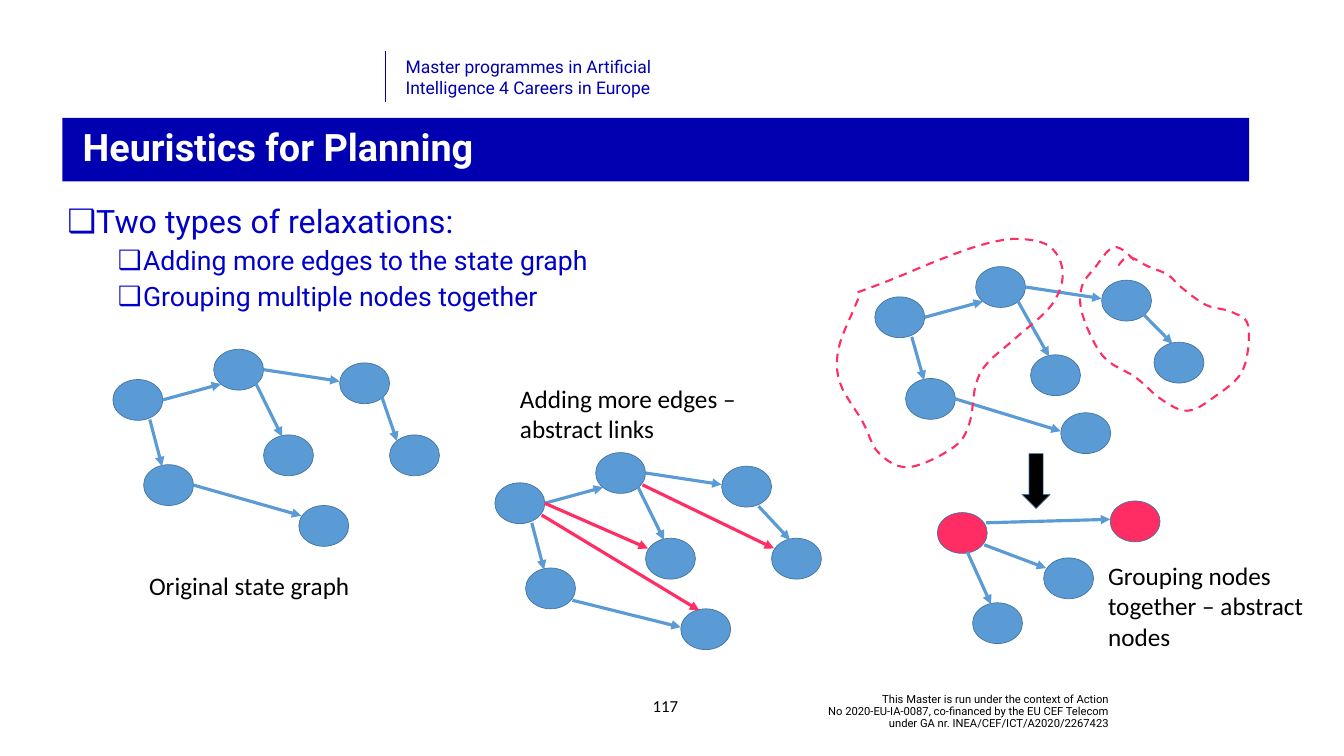
"""Build the slide on relaxation heuristics for planning, with its state graphs."""
from lxml import etree
from pptx import Presentation, util as u
from pptx.dml.color import RGBColor
from pptx.enum import dml, shapes, text
from pptx.oxml.ns import qn

WIDTH, HEIGHT = 26.67, 15
CELL = u.Inches(1)
NODE = (0.99, 0.81)
CURVE_STEPS = 6
COLORS = {"navy": "0000B0", "blue": "0100C8", "node": "5B9BD5", "edge": "43739E",
          "pink": "FF2D64", "black": "000000", "white": "FFFFFF"}
LEFT, CENTER, RIGHT = text.PP_ALIGN.LEFT, text.PP_ALIGN.CENTER, text.PP_ALIGN.RIGHT
TOP, MIDDLE = text.MSO_ANCHOR.TOP, text.MSO_ANCHOR.MIDDLE

TITLE = "Heuristics for Planning"
PROGRAMME = ["Master programmes in Artificial", "Intelligence 4 Careers in Europe"]
FUNDING = ["This Master is run under the context of Action",
           "No 2020-EU-IA-0087, co-financed by the EU CEF Telecom",
           "under GA nr. INEA/CEF/ICT/A2020/2267423"]
BULLETS = [(0, "Two types of relaxations:"),
           (1, "Adding more edges to the state graph"),
           (1, "Grouping multiple nodes together")]
LEVELS = [{"size": 46, "margin": 0.5, "before": 0}, {"size": 38, "margin": 1.5, "before": 10}]
LABELS = [("Original state graph", (2.86, 11.26, 4.29, 0.71)),
          ("Grouping nodes together – abstract nodes", (21.89, 11.07, 4.1, 1.92)),
          ("Adding more edges – abstract links", (10.22, 7.56, 4.88, 1.31))]

PORTS = {"E": (1, 0.5), "ENE": (0.98, 0.25), "ESE": (0.94, 0.79), "SE": (0.85, 0.85),
         "SSE": (0.74, 0.98), "S": (0.6, 0.96), "SW": (0.15, 0.85), "W": (0, 0.45),
         "WNW": (0.05, 0.25), "NW": (0.15, 0.15), "NNW": (0.37, 0.04)}

STATES = {"start": (0, 0), "top": (2, -0.6), "right": (4.5, -0.33), "middle": (2.99, 1.1),
          "low": (0.61, 1.69), "far": (3.69, 2.5), "leaf": (5.49, 1.1)}
TIGHT_STATES = {**STATES, "middle": (3.09, 1.15), "low": (0.61, 1.62),
                "far": (3.69, 2.3), "leaf": (5.54, 0.9)}
GROUPED_STATES = {"left group": (0, 0), "right group": (3.43, -0.23),
                  "middle": (2.11, 0.9), "far": (0.7, 1.79)}
MOVES = ["start E top SW", "start SSE low NNW", "top E right W", "top SE middle NNW"]

ORIGINAL = {"origin": (2.24, 7.53), "states": STATES,
            "edges": MOVES + ["low E far WNW", "right SE leaf NW"]}
LINKED = {"origin": (9.82, 9.58), "states": STATES,
          "edges": MOVES + ["low ESE far W", "right SSE leaf NNW"],
          "links": ["start ESE far NNW", "start E middle WNW", "top ESE leaf WNW"]}
CLUSTERED = {"origin": (17.36, 5.89), "states": TIGHT_STATES,
             "edges": MOVES + ["low E far W", "right SE leaf NNW"]}
GROUPED = {"origin": (18.6, 10.17), "states": GROUPED_STATES,
           "edges": ["left group ENE right group W", "left group S far NNW",
                     "left group ESE middle WNW"],
           "merged": ["left group", "right group"]}

LEFT_CLUSTER = [(17.02, 5.8), (17.71, 5.54), (18.68, 5.14), (19.51, 4.85), (20.2, 4.74),
                (20.83, 4.89), (21.09, 5.41), (20.87, 6.05), (20.14, 6.72), (19.58, 7.22),
                (19.36, 7.65), (19.24, 8.39), (18.93, 8.87), (18.04, 9.27), (17.44, 8.99),
                (17.12, 8.37), (16.67, 7.6), (16.64, 6.92), (16.95, 6.12), (17.06, 5.87)]
RIGHT_CLUSTER = [(22.51, 5.16), (22.23, 4.93), (22.02, 4.95), (21.73, 5.31), (21.47, 5.68),
                 (21.48, 6.24), (21.89, 7.07), (22.54, 7.49), (23.04, 7.92), (23.56, 8.15),
                 (24.09, 7.88), (24.66, 7.35), (24.77, 6.47), (24.44, 6.19), (23.93, 6.05),
                 (23.44, 5.7), (23.17, 5.45), (22.77, 5.28), (22.39, 5.1), (22.16, 5.31)]


def color(name):
    return RGBColor.from_string(COLORS[name])


def cells(values):
    return [round(value * CELL) for value in values]


def smooth(points):
    """Return points along a Catmull-Rom curve through the given ones."""
    padded = [points[0], *points, points[-1]]
    curve = []
    for knots in zip(padded, padded[1:], padded[2:], padded[3:]):
        for step in range(CURVE_STEPS):
            t = step / CURVE_STEPS
            curve.append([b + t * (c - a) / 2 + t ** 2 * (a - 2.5 * b + 2 * c - d / 2)
                          + t ** 3 * (3 * b - a - 3 * c + d) / 2
                          for a, b, c, d in zip(*knots)])
    return curve + [points[-1]]


def add_solid(page, kind, area, fill, line=None):
    solid = page.shapes.add_shape(kind, *cells(area))
    solid.shadow.inherit = False
    solid.fill.solid()
    solid.fill.fore_color.rgb = color(fill)
    if line:
        solid.line.color.rgb = color(line)
        solid.line.width = u.Pt(1)
    else:
        solid.line.fill.background()
    return solid


def add_line(page, start, end, name, width, arrow=True):
    line = page.shapes.add_connector(shapes.MSO_CONNECTOR.STRAIGHT, *cells((*start, *end)))
    line.line.color.rgb = color(name)
    line.line.width = u.Pt(width)
    if arrow:
        etree.SubElement(line.line._get_or_add_ln(), qn("a:tailEnd"), type="triangle")
    etree.SubElement(line._element.spPr, qn("a:effectLst"))


def add_cluster(page, points):
    first, *others = [cells(point) for point in smooth(points)]
    builder = page.shapes.build_freeform(*first)
    builder.add_line_segments(others, close=False)
    outline = builder.convert_to_shape()
    outline.shadow.inherit = False
    outline.fill.background()
    outline.line.color.rgb = color("pink")
    outline.line.width = u.Pt(3)
    outline.line.dash_style = dml.MSO_LINE.DASH


def add_graph(page, graph):
    left, top = graph["origin"]
    corners = {name: (left + x, top + y) for name, (x, y) in graph["states"].items()}

    def port(name, side):
        return [corner + share * size
                for corner, share, size in zip(corners[name], PORTS[side], NODE)]

    for name, corner in corners.items():
        fill = "pink" if name in graph.get("merged", []) else "node"
        add_solid(page, shapes.MSO_SHAPE.OVAL, corner + NODE, fill, "edge")
    for tint, edges in (("node", graph["edges"]), ("pink", graph.get("links", []))):
        for edge in edges:
            words = edge.split()
            out = next(i for i, word in enumerate(words) if word in PORTS)
            start = port(" ".join(words[:out]), words[out])
            end = port(" ".join(words[out + 1:-1]), words[-1])
            add_line(page, start, end, tint, 4.5)


def write(para, lines, size, font, name, bold=False):
    for index, line in enumerate(lines):
        if index:
            para.add_line_break()
        span = para.add_run()
        span.text = line
        span.font.size, span.font.name, span.font.bold = u.Pt(size), font, bold
        span.font.color.rgb = color(name)


def add_text(page, area, lines, size, font, name, align=LEFT, anchor=TOP, spacing=None):
    frame = page.shapes.add_textbox(*cells(area)).text_frame
    frame.word_wrap, frame.vertical_anchor = True, anchor
    para = frame.paragraphs[0]
    para.alignment, para.line_spacing = align, spacing
    write(para, lines, size, font, name)


def add_title(page):
    banner = add_solid(page, shapes.MSO_SHAPE.RECTANGLE, (1.24, 2.34, 23.55, 1.26), "navy")
    frame = banner.text_frame
    frame.margin_left, frame.vertical_anchor = u.Inches(0.4), MIDDLE
    para = frame.paragraphs[0]
    para.alignment, para.line_spacing = LEFT, 0.9
    write(para, [TITLE], 54, "Roboto", "white", bold=True)


def add_bullets(page):
    frame = page.shapes.add_textbox(*cells((1.24, 4.04, 23.55, 2.27))).text_frame
    frame.word_wrap = True
    for index, (level, line) in enumerate(BULLETS):
        para = frame.add_paragraph() if index else frame.paragraphs[0]
        style = LEVELS[level]
        para.level, para.line_spacing = level, 0.9
        para.space_before = u.Pt(style["before"])
        props = para._p.get_or_add_pPr()
        props.set("marL", str(u.Inches(style["margin"])))
        props.set("indent", str(u.Inches(-0.5)))
        etree.SubElement(props, qn("a:buFont"), typeface="Roboto")
        etree.SubElement(props, qn("a:buChar"), char="❑")
        write(para, [line], style["size"], "Roboto", "blue")


def main():
    deck = Presentation()
    deck.slide_width, deck.slide_height = cells((WIDTH, HEIGHT))
    page = deck.slides.add_slide(deck.slide_layouts[6])
    add_text(page, (15.02, 13.74, 7.08, 0.76), FUNDING, 16, "Roboto", "black", RIGHT, MIDDLE, 0.9)
    add_line(page, (7.65, 1.01), (7.65, 2.03), "navy", 0.5, arrow=False)
    add_text(page, (7.95, 1.06, 6.37, 0.94), PROGRAMME, 25, "Roboto", "navy")
    add_text(page, (12.65, 13.61, 1.11, 0.8), ["117"], 24, "Calibri", "black", CENTER, MIDDLE)
    add_title(page)
    add_bullets(page)
    for graph in (ORIGINAL, LINKED, CLUSTERED):
        add_graph(page, graph)
    for cluster in (LEFT_CLUSTER, RIGHT_CLUSTER):
        add_cluster(page, cluster)
    add_graph(page, GROUPED)
    add_solid(page, shapes.MSO_SHAPE.DOWN_ARROW, (20.28, 9, 0.56, 1.09), "black", "edge")
    for label, area in LABELS:
        add_text(page, area, [label], 36, "Calibri", "black")
    deck.save("out.pptx")


if __name__ == "__main__":
    main()
